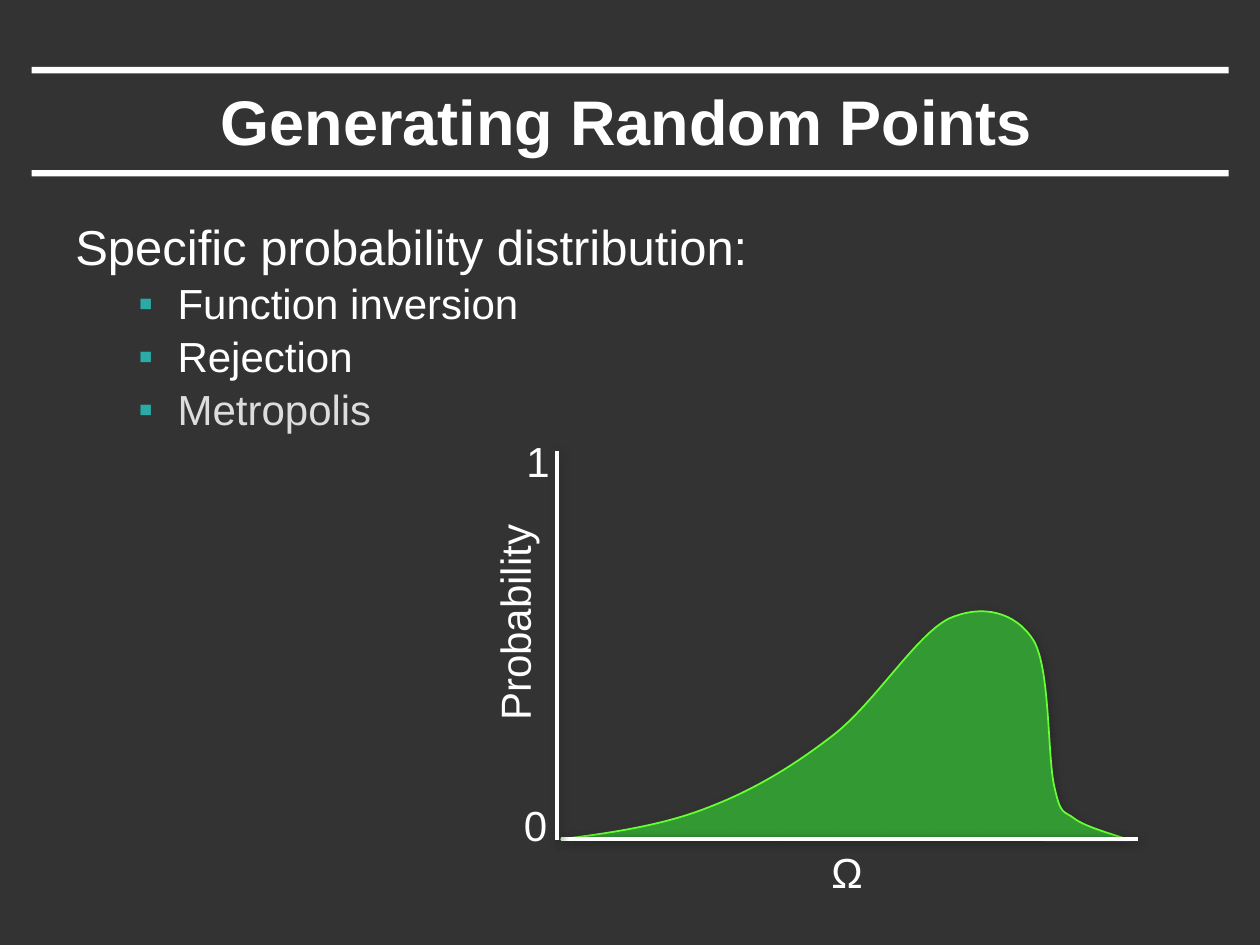
from lxml.etree import SubElement
from pptx import Presentation
from pptx.dml.color import RGBColor
from pptx.enum.shapes import MSO_CONNECTOR, MSO_SHAPE
from pptx.enum.text import MSO_ANCHOR, MSO_AUTO_SIZE, PP_ALIGN
from pptx.oxml.ns import qn
from pptx.util import Cm, Pt

WHITE = RGBColor(0xFF, 0xFF, 0xFF)
CHARCOAL = RGBColor(0x33, 0x33, 0x33)
PALE_GREY = RGBColor(0xDD, 0xDD, 0xDD)
TEAL = RGBColor(0x2A, 0xAB, 0xA8)
GREEN = RGBColor(0x33, 0x99, 0x33)
LIME = RGBColor(0x66, 0xFF, 0x33)
SHADOW = RGBColor(0x29, 0x29, 0x29)

CURVE_START = (11.3, 16.92)
CURVE_POINTS = [
    (12.32, 16.79), (13.36, 16.64), (14.27, 16.28),
    (15.19, 15.93), (16, 15.44), (16.81, 14.81),
    (17.63, 14.17), (18.47, 12.8), (19.13, 12.47),
    (19.81, 12.17), (20.47, 12.34), (20.83, 12.9),
    (21.18, 13.46), (21.11, 15.27), (21.26, 15.88),
    (21.39, 16.46), (21.44, 16.33), (21.67, 16.51),
    (21.92, 16.69), (22.53, 16.84), (22.76, 16.94),
]


class SlideBuilder:
    text_format = {"name": "Arial", "size": Pt(24), "bold": False}

    def __init__(self, deck):
        self.page = deck.slides.add_slide(deck.slide_layouts[5])
        self.page.background.fill.solid()
        self.page.background.fill.fore_color.rgb = CHARCOAL

    def add_span(self, para, text, color=WHITE, **changes):
        span = para.add_run()
        span.text = text
        for name, value in {**self.text_format, **changes}.items():
            setattr(span.font, name, value)
        span.font.color.rgb = color

    def title(self, text, left, top, width, height):
        box = self.page.shapes.title
        place = {"left": left, "top": top, "width": width, "height": height}
        for name, value in place.items():
            setattr(box, name, Cm(value))
        box.text_frame.vertical_anchor = MSO_ANCHOR.MIDDLE
        para = box.text_frame.paragraphs[0]
        para.alignment = PP_ALIGN.CENTER
        self.add_span(para, text, size=Pt(36), bold=True)

    def bar(self, left, top, width, height):
        bar = self.page.shapes.add_shape(
            MSO_SHAPE.RECTANGLE, Cm(left), Cm(top), Cm(width), Cm(height))
        bar.shadow.inherit = False
        bar.fill.solid()
        bar.fill.fore_color.rgb = WHITE
        bar.line.fill.background()

    def outline(self, heading, items, left, top, width, height):
        box = self.page.shapes.add_textbox(
            Cm(left), Cm(top), Cm(width), Cm(height))
        frame = box.text_frame
        frame.word_wrap = True
        para = frame.paragraphs[0]
        para.space_before = Pt(3.6)
        self.add_span(para, heading, size=Pt(28))
        for text, color in items:
            para = frame.add_paragraph()
            para.level = 1
            para.space_before = Pt(1.4)
            self.add_span(para, text, color)
            self.bullet(para)

    def bullet(self, para):
        properties = para._p.get_or_add_pPr()
        properties.set("marL", str(Cm(2.06)))
        properties.set("indent", str(Cm(-0.79)))
        color = SubElement(properties, qn("a:buClr"))
        SubElement(color, qn("a:srgbClr"), val=str(TEAL))
        SubElement(properties, qn("a:buFont"), typeface="Arial")
        SubElement(properties, qn("a:buChar"), char="▪")

    def label(self, text, left, top, width, height=1.27, rotation=0):
        box = self.page.shapes.add_textbox(
            Cm(left), Cm(top), Cm(width), Cm(height))
        box.rotation = rotation
        box.text_frame.word_wrap = False
        box.text_frame.auto_size = MSO_AUTO_SIZE.SHAPE_TO_FIT_TEXT
        self.add_span(box.text_frame.paragraphs[0], text)

    def cast_shadow(self, shape, opacity):
        effects = SubElement(shape._element.spPr, qn("a:effectLst"))
        outer = SubElement(
            effects, qn("a:outerShdw"), blurRad=str(Pt(5)), dist=str(Pt(1.4)),
            dir="2700000", algn="ctr", rotWithShape="0")
        color = SubElement(outer, qn("a:srgbClr"), val=str(SHADOW))
        SubElement(color, qn("a:alpha"), val=str(opacity * 1000))

    def axis(self, start, end):
        axis = self.page.shapes.add_connector(
            MSO_CONNECTOR.STRAIGHT, *map(Cm, start), *map(Cm, end))
        axis.line.color.rgb = WHITE
        axis.line.width = Pt(2.25)
        self.cast_shadow(axis, 75)

    def curved_area(self, start, points):
        builder = self.page.shapes.build_freeform(*map(Cm, start))
        builder.add_line_segments([(Cm(x), Cm(y)) for x, y in points])
        area = builder.convert_to_shape()
        outline = next(area._element.iter(qn("a:path")))
        segments = outline.findall(qn("a:lnTo"))[:len(points)]
        for first in range(0, len(points), 3):
            trio = segments[first:first + 3]
            curve = SubElement(outline, qn("a:cubicBezTo"))
            trio[0].addprevious(curve)
            for segment in trio:
                curve.append(segment[0])
                outline.remove(segment)
        area.fill.solid()
        area.fill.fore_color.rgb = GREEN
        area.line.color.rgb = LIME
        area.line.width = Pt(1)
        self.cast_shadow(area, 100)


def main():
    deck = Presentation()
    deck.slide_width, deck.slide_height = Cm(25.4), Cm(19.05)
    slide = SlideBuilder(deck)
    for top in (3.43, 1.35):
        slide.bar(0.64, top, 24.13, 0.13)
    slide.title("Generating Random Points", 1.88, 1.47, 21.51, 1.9)
    slide.outline(
        "Specific probability distribution:",
        [("Function inversion", WHITE), ("Rejection", WHITE),
         ("Metropolis", PALE_GREY)],
        1.27, 4.24, 22.86, 13.97)
    slide.curved_area(CURVE_START, CURVE_POINTS)
    slide.label("Probability", 8.13, 11.91, 4.47, rotation=270)
    slide.label("0", 10.31, 16, 0.99)
    slide.label("1", 10.36, 8.66, 0.99)
    slide.label("Ω", 16.51, 16.94, 1.17)
    slide.axis((11.3, 16.92), (22.94, 16.92))
    slide.axis((11.23, 16.94), (11.23, 9.09))
    deck.save("out.pptx")


if __name__ == "__main__":
    main()
